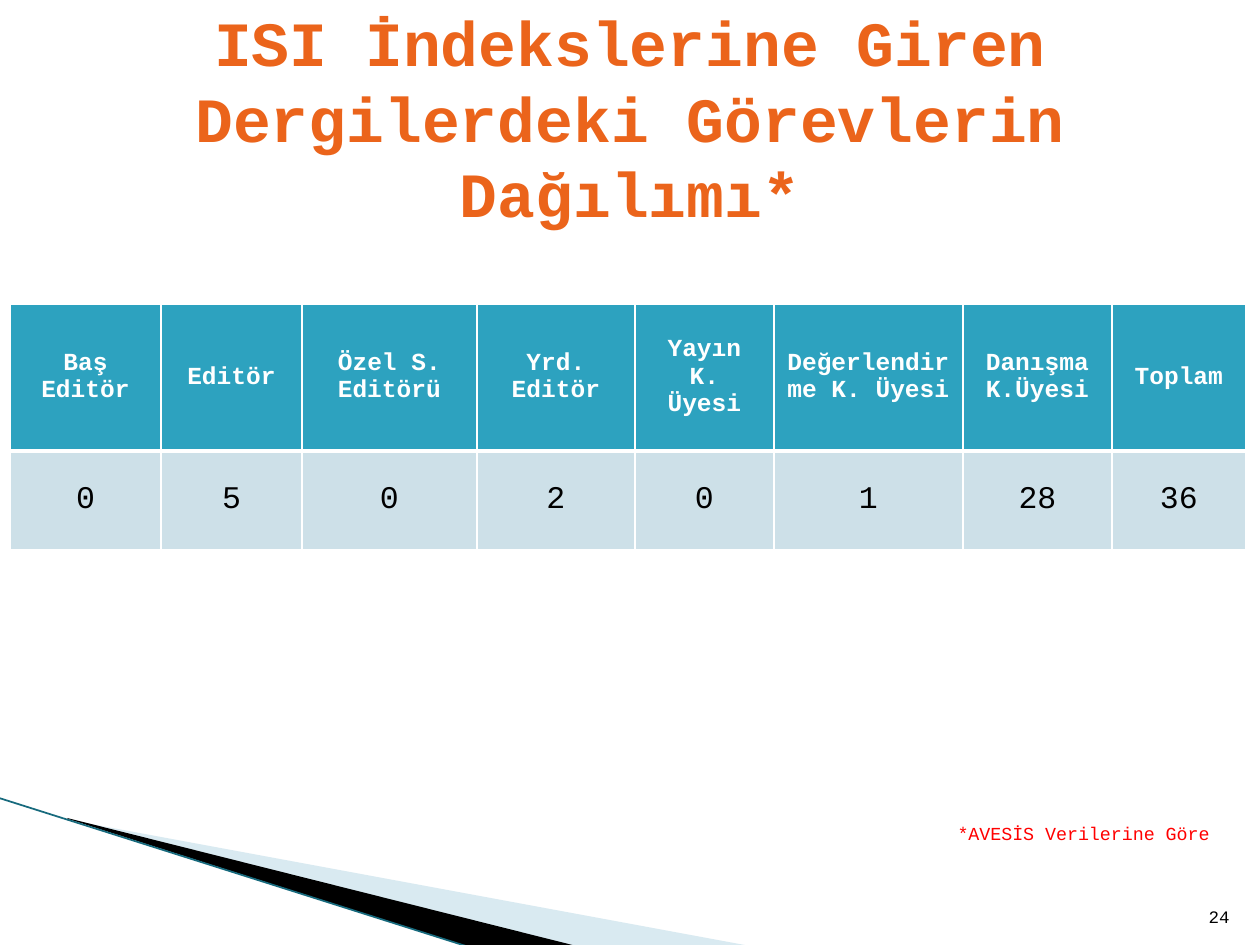
from lxml import etree
from pptx import Presentation
from pptx import util as u
from pptx.dml.color import RGBColor
from pptx.enum import shapes, text
from pptx.oxml import parse_xml
from pptx.oxml.ns import nsdecls, qn

SCALE = 914400 / 126
FONT = "Courier New"


def px(length):
    return u.Emu(round(length * SCALE))


def style(para, size, colour, align, bold=False):
    para.alignment = align
    para.font.name = FONT
    para.font.size = u.Pt(size)
    para.font.bold = bold
    para.font.color.rgb = RGBColor.from_string(colour)


deck = Presentation()
deck.slide_width, deck.slide_height = px(1260), px(945)
page = deck.slides.add_slide(deck.slide_layouts[6])

# Corner wedges
wedges = [
    ("A0CBDC", 40, [(69, 820), (750, 946), (575, 946), (69, 819)]),
    ("000000", 100, [(67, 818), (576, 946), (469, 947), (68, 819)]),
]
for colour, opacity, points in wedges:
    builder = page.shapes.build_freeform(*points[0], scale=SCALE)
    builder.add_line_segments(points[1:], close=True)
    wedge = builder.convert_to_shape()
    wedge.shadow.inherit = False
    wedge.line.fill.background()
    wedge.fill.solid()
    wedge.fill.fore_color.rgb = RGBColor.from_string(colour)
    if opacity < 100:
        tint = wedge.fill._xPr.find(".//" + qn("a:srgbClr"))
        etree.SubElement(tint, qn("a:alpha"), val=str(opacity * 1000))

edge = page.shapes.add_connector(
    shapes.MSO_CONNECTOR.STRAIGHT, px(-1), px(798), px(469), px(947))
edge.line.color.rgb = RGBColor.from_string("176A7D")
edge.line.width = u.Pt(1)
etree.SubElement(edge._element.spPr, qn("a:effectLst"))

# Table of editorial duties
duties = [
    ("Baş Editör", 0, 151),
    ("Editör", 5, 141),
    ("Özel S. Editörü", 0, 175),
    ("Yrd. Editör", 2, 158),
    ("Yayın K. Üyesi", 0, 139),
    ("Değerlendirme K. Üyesi", 1, 189),
    ("Danışma K.Üyesi", 28, 149),
    ("Toplam", 36, 134),
]
row_heights = [147, 99]
table = page.shapes.add_table(
    2, len(duties), px(10), px(304),
    px(sum(width for _, _, width in duties)), px(sum(row_heights))).table
for row, height in zip(table.rows, row_heights):
    row.height = px(height)

for col, (duty, count, width) in enumerate(duties):
    table.columns[col].width = px(width)
    header, value = table.cell(0, col), table.cell(1, col)
    header.text, value.text = duty, str(count)
    style(header.text_frame.paragraphs[0], 14, "FFFFFF", text.PP_ALIGN.CENTER, True)
    style(value.text_frame.paragraphs[0], 18, "000000", text.PP_ALIGN.CENTER)
    value.margin_left = value.margin_right = px(8)
    value.margin_top, value.margin_bottom = px(4), px(5)
    # The rule between the two rows is thicker than the other borders
    for cell, fill, top, bottom in ((header, "2DA2BF", 1, 3), (value, "CDE0E8", 3, 1)):
        cell.vertical_anchor = text.MSO_ANCHOR.MIDDLE
        cell.fill.solid()
        cell.fill.fore_color.rgb = RGBColor.from_string(fill)
        borders = [("lnL", 1), ("lnR", 1), ("lnT", top), ("lnB", bottom)]
        for place, (side, points) in enumerate(borders):
            cell._tc.tcPr.insert(place, parse_xml(
                f'<a:{side} {nsdecls("a")} w="{u.Pt(points)}"><a:solidFill>'
                f'<a:srgbClr val="FFFFFF"/></a:solidFill></a:{side}>'))

# Page number, title and footnote
middle, bottom = text.MSO_ANCHOR.MIDDLE, text.MSO_ANCHOR.BOTTOM
center, right = text.PP_ALIGN.CENTER, text.PP_ALIGN.RIGHT
labels = [
    ("24", (1192, 883, 50, 50), bottom, 10, "000000", right, False),
    ("ISI İndekslerine Giren Dergilerdeki Görevlerin Dağılımı*",
     (63, 38, 1134, 158), middle, 36, "EB641B", center, True),
    ("*AVESİS Verilerine Göre", (898, 800, 324, 50), bottom, 10.5, "FF0000", right, False),
]
for words, place, anchor, size, colour, align, bold in labels:
    box = page.shapes.add_textbox(*map(px, place))
    frame = box.text_frame
    frame.word_wrap = True
    frame.vertical_anchor = anchor
    frame.text = words
    style(frame.paragraphs[0], size, colour, align, bold)

deck.save("out.pptx")
